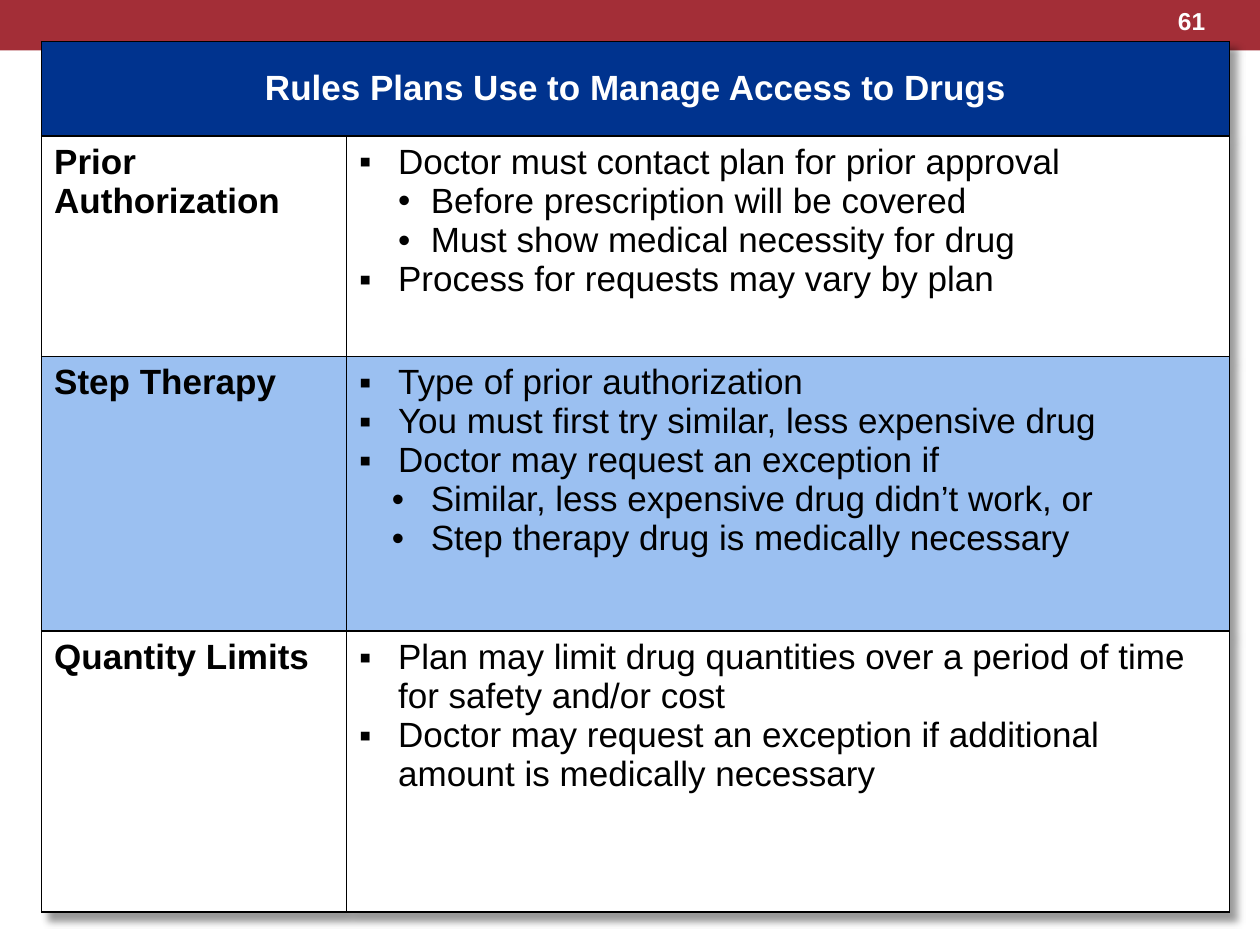
from lxml import etree
from pptx import Presentation
from pptx import util as u
from pptx.dml.color import RGBColor
from pptx.enum import shapes, text
from pptx.oxml import ns

RED = RGBColor(0xA3, 0x2E, 0x37)
NAVY = RGBColor(0x00, 0x33, 0x8E)
SKY = RGBColor(0x9B, 0xC0, 0xF1)
WHITE = RGBColor(0xFF, 0xFF, 0xFF)
BLACK = RGBColor(0x00, 0x00, 0x00)

# Paragraph styles: bullet, left indent, hanging indent
MAIN = ("▪", 0.31, 0.31)
SUB = ("•", 0.57, 0.26)
WIDE_SUB = ("•", 0.57, 0.31)

TITLE = "Rules Plans Use to Manage Access to Drugs"
RULES = [
    ("Prior Authorization", WHITE, [
        (MAIN, "Doctor must contact plan for prior approval"),
        (SUB, "Before prescription will be covered"),
        (SUB, "Must show medical necessity for drug"),
        (MAIN, "Process for requests may vary by plan"),
    ]),
    ("Step Therapy", SKY, [
        (MAIN, "Type of prior authorization"),
        (MAIN, "You must first try similar, less expensive drug"),
        (MAIN, "Doctor may request an exception if"),
        (WIDE_SUB, "Similar, less expensive drug didn’t work, or"),
        (WIDE_SUB, "Step therapy drug is medically necessary"),
    ]),
    ("Quantity Limits", WHITE, [
        (MAIN, "Plan may limit drug quantities over a period of time "
               "for safety and/or cost"),
        (MAIN, "Doctor may request an exception if additional "
               "amount is medically necessary"),
    ]),
]
COLUMN_WIDTHS = [2.42, 7.01]
ROW_HEIGHTS = [0.75, 1.75, 2.18, 2.23]


def add_element(parent, tag, **attributes):
    values = {name: str(value) for name, value in attributes.items()}
    return etree.SubElement(parent, ns.qn(tag), values)


class SlideBuilder:
    font_name = "Arial"
    text_size = 20

    def __init__(self, slide):
        self.slide = slide

    def band(self, left, top, width, height, color):
        shape = self.slide.shapes.add_shape(
            shapes.MSO_SHAPE.RECTANGLE,
            *map(u.Inches, (left, top, width, height)))
        shape.shadow.inherit = False
        shape.fill.solid()
        shape.fill.fore_color.rgb = color
        shape.line.fill.background()

    def run(self, paragraph, words, color, bold=False, size=text_size):
        run = paragraph.add_run()
        run.text = words
        run.font.name = self.font_name
        run.font.size = u.Pt(size)
        run.font.bold = bold
        run.font.color.rgb = color

    def label(self, left, top, width, height, words, size):
        box = self.slide.shapes.add_textbox(
            *map(u.Inches, (left, top, width, height)))
        box.text_frame.word_wrap = False
        box.text_frame.auto_size = text.MSO_AUTO_SIZE.SHAPE_TO_FIT_TEXT
        self.run(box.text_frame.paragraphs[0], words, WHITE, True, size)

    def table(self, left, top, widths, heights):
        frame = self.slide.shapes.add_table(
            len(heights), len(widths), u.Inches(left), u.Inches(top),
            u.Inches(sum(widths)), u.Inches(sum(heights)))
        table = frame.table
        table.horz_banding = False
        for column, width in zip(table.columns, widths):
            column.width = u.Inches(width)
        for row, height in zip(table.rows, heights):
            row.height = u.Inches(height)
        self.table_shadow(table)
        return table

    def table_shadow(self, table):
        effects = etree.Element(ns.qn("a:effectLst"))
        shadow = add_element(effects, "a:outerShdw", blurRad=u.Pt(4),
                             dist=u.Pt(6), dir=2700000, algn="tl",
                             rotWithShape=0)
        color = add_element(shadow, "a:prstClr", val="black")
        add_element(color, "a:alpha", val=40000)
        table._tbl.tblPr.insert(0, effects)

    def cell_style(self, cell, color):
        properties = cell._tc.get_or_add_tcPr()
        for side in ("a:lnL", "a:lnR", "a:lnT", "a:lnB"):
            line = add_element(properties, side, w=u.Pt(1))
            fill = add_element(line, "a:solidFill")
            add_element(fill, "a:srgbClr", val=BLACK)
        cell.fill.solid()
        cell.fill.fore_color.rgb = color

    def bullets(self, cell, items):
        frame = cell.text_frame
        for index, ((mark, indent, hanging), words) in enumerate(items):
            paragraph = frame.add_paragraph() if index else frame.paragraphs[0]
            properties = paragraph._p.get_or_add_pPr()
            properties.set("marL", str(u.Inches(indent)))
            properties.set("indent", str(-u.Inches(hanging)))
            add_element(properties, "a:buFont", typeface=self.font_name)
            add_element(properties, "a:buChar", char=mark)
            self.run(paragraph, words, BLACK)


def main():
    presentation = Presentation()
    presentation.slide_width = u.Inches(10)
    presentation.slide_height = u.Inches(7.5)
    slide = presentation.slides.add_slide(presentation.slide_layouts[6])
    builder = SlideBuilder(slide)

    # Top band
    builder.band(0, 0, 10, 0.4, RED)

    # Table heading
    table = builder.table(0.33, 0.33, COLUMN_WIDTHS, ROW_HEIGHTS)
    heading = table.cell(0, 0)
    heading.merge(table.cell(0, 1))
    for column in range(2):
        builder.cell_style(table.cell(0, column), NAVY)
    heading.vertical_anchor = text.MSO_ANCHOR.MIDDLE
    paragraph = heading.text_frame.paragraphs[0]
    paragraph.alignment = text.PP_ALIGN.CENTER
    builder.run(paragraph, TITLE, WHITE, True)

    # One row for each rule
    for row, (name, color, items) in enumerate(RULES, start=1):
        name_cell, detail_cell = table.cell(row, 0), table.cell(row, 1)
        for cell in (name_cell, detail_cell):
            builder.cell_style(cell, color)
        builder.run(name_cell.text_frame.paragraphs[0], name, BLACK, True)
        builder.bullets(detail_cell, items)

    # Page number
    builder.label(9.25, 0, 0.42, 0.34, "61", 14)

    presentation.save("out.pptx")


if __name__ == "__main__":
    main()
